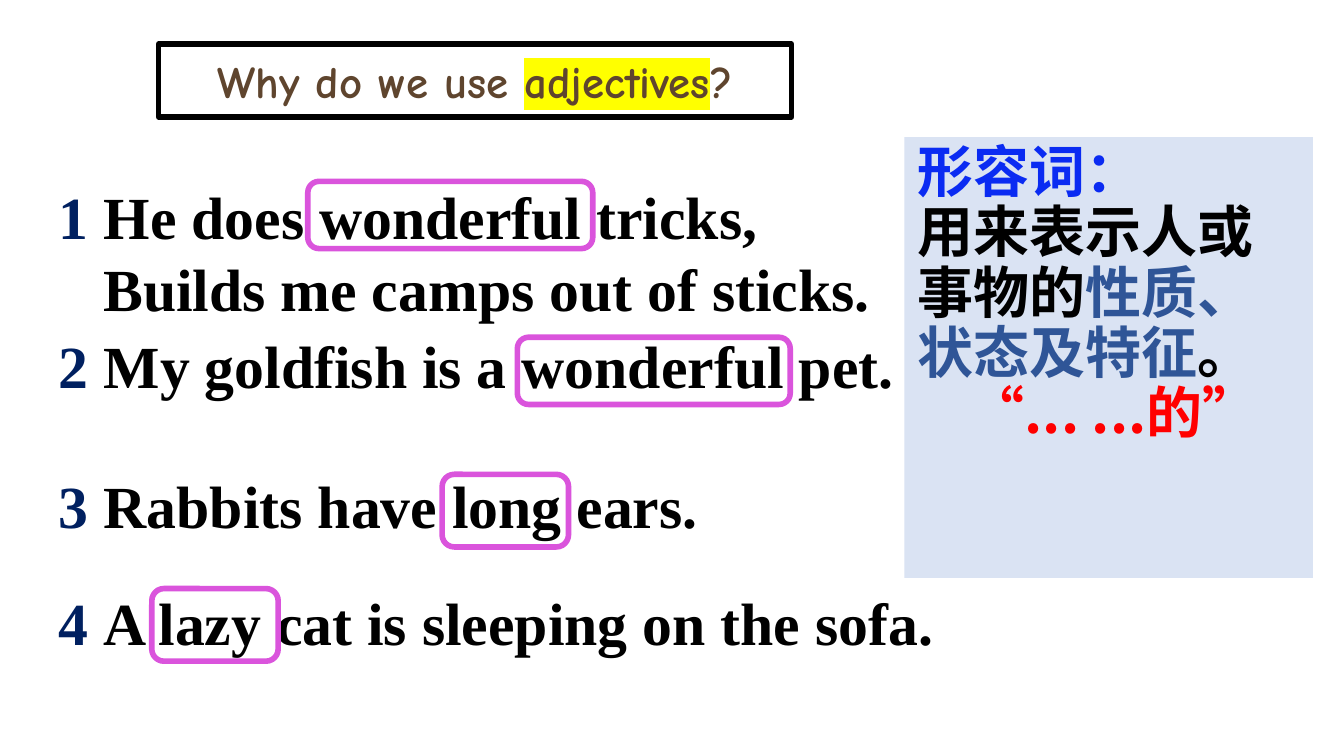
import pptx
import pptx.util
import pptx.dml.color
import pptx.enum.shapes
import pptx.enum.text
import pptx.oxml.ns
from lxml import etree

Inches, Pt = pptx.util.Inches, pptx.util.Pt
SHAPES = pptx.enum.shapes.MSO_SHAPE
ALIGN = pptx.enum.text.PP_ALIGN
ANCHOR = pptx.enum.text.MSO_ANCHOR
qn = pptx.oxml.ns.qn

NAVY, BLACK, BROWN, PINK = "002060", "000000", "5F452E", "DA54DC"
BLUE, STEEL, RED, PALE, YELLOW = "0A2BF2", "2F5597", "FF0000", "DAE3F3", "FFFF00"

SENTENCE_FONT = {"name": "Times New Roman", "size": Pt(32), "bold": True}
TITLE_FONT = {"name": "Comic Neue", "size": Pt(24), "bold": True}
NOTE_FONT = {"name": "Noto Sans CJK SC", "size": Pt(30), "bold": True}

SLIDE_WIDTH = 10
SLIDE_HEIGHT = SLIDE_WIDTH * 9 / 16
SENTENCE_LEFT = 0.34
SENTENCES = [
    (1.29, 6.63, 1.72, "1", ["He does wonderful tricks,", "Builds me camps out of sticks."]),
    (2.4, 6.76, 1.18, "2", ["My goldfish is a wonderful pet."]),
    (3.44, 6.63, 0.64, "3", ["Rabbits have long ears."]),
    (4.31, 7, 1.18, "4", ["A lazy cat is sleeping on the sofa."]),
]
ADJECTIVE_FRAMES = [
    (1.13, 4.38, 0.94, 0.54),
    (3.85, 2.51, 2.03, 0.5),
    (2.29, 1.35, 2.12, 0.5),
    (3.29, 3.53, 0.94, 0.54),
]
TITLE_AREA = (1.18, 0.33, 4.71, 0.54)
TITLE = [("Why do we use ", BROWN, None), ("adjectives", BROWN, YELLOW), ("?", BROWN, None)]
NOTE_AREA = (6.73, 1.02, 3.04, 3.28)
NOTE = [
    (0, [("形容词：", BLUE)]),
    (0, [("用来表示人或事物的", BLACK), ("性质、状态及特征", STEEL), ("。", BLACK)]),
    (0.38, [("“... ...的”", RED)]),
]


def color(value):
    return pptx.dml.color.RGBColor.from_string(value)


def apply(target, values):
    for name, value in values.items():
        setattr(target, name, value)


def add_panel(page, kind, area, fill=None, line=None):
    shape = page.shapes.add_shape(kind, *map(Inches, area))
    shape.shadow.inherit = False
    if fill:
        shape.fill.solid()
        shape.fill.fore_color.rgb = color(fill)
    else:
        shape.fill.background()
    if line:
        shape.line.color.rgb = color(line)
        shape.line.width = Pt(3)
    else:
        shape.line.fill.background()
    return shape


def add_paragraph(frame, index, indent=0, **values):
    para = frame.paragraphs[0] if index == 0 else frame.add_paragraph()
    para._p.get_or_add_pPr().set("marL", str(Inches(indent)))
    apply(para, values)
    return para


def add_span(para, text, font, ink, highlight=None):
    span = para.add_run()
    span.text = text
    apply(span.font, font)
    span.font.color.rgb = color(ink)
    properties = span.font._element
    etree.SubElement(properties, qn("a:ea")).set("typeface", font["name"])
    if highlight:
        mark = etree.Element(qn("a:highlight"))
        etree.SubElement(mark, qn("a:srgbClr")).set("val", highlight)
        properties.find(qn("a:solidFill")).addnext(mark)


def add_sentence(page, top, width, height, number, lines):
    box = page.shapes.add_textbox(*map(Inches, (SENTENCE_LEFT, top, width, height)))
    frame = box.text_frame
    frame.word_wrap = True
    for index, line in enumerate(lines):
        para = add_paragraph(frame, index, indent=0.33 if index else 0)
        if index == 0:
            add_span(para, number + " ", SENTENCE_FONT, NAVY)
        add_span(para, line, SENTENCE_FONT, BLACK)


def add_title(page):
    frame = add_panel(page, SHAPES.RECTANGLE, TITLE_AREA, line=BLACK).text_frame
    apply(frame, {"word_wrap": True, "vertical_anchor": ANCHOR.MIDDLE})
    para = add_paragraph(frame, 0, alignment=ALIGN.CENTER)
    for text, ink, highlight in TITLE:
        add_span(para, text, TITLE_FONT, ink, highlight)


def add_note(page):
    frame = add_panel(page, SHAPES.RECTANGLE, NOTE_AREA, fill=PALE).text_frame
    apply(frame, {"word_wrap": True, "vertical_anchor": ANCHOR.TOP})
    for index, (indent, spans) in enumerate(NOTE):
        para = add_paragraph(frame, index, indent, alignment=ALIGN.LEFT, line_spacing=0.9)
        for text, ink in spans:
            add_span(para, text, NOTE_FONT, ink)


def main():
    deck = pptx.Presentation()
    apply(deck, {"slide_width": Inches(SLIDE_WIDTH), "slide_height": Inches(SLIDE_HEIGHT)})
    page = deck.slides.add_slide(deck.slide_layouts[6])
    for sentence in SENTENCES:
        add_sentence(page, *sentence)
    for area in ADJECTIVE_FRAMES:
        add_panel(page, SHAPES.ROUNDED_RECTANGLE, area, line=PINK)
    add_title(page)
    add_note(page)
    deck.save("out.pptx")


if __name__ == "__main__":
    main()
